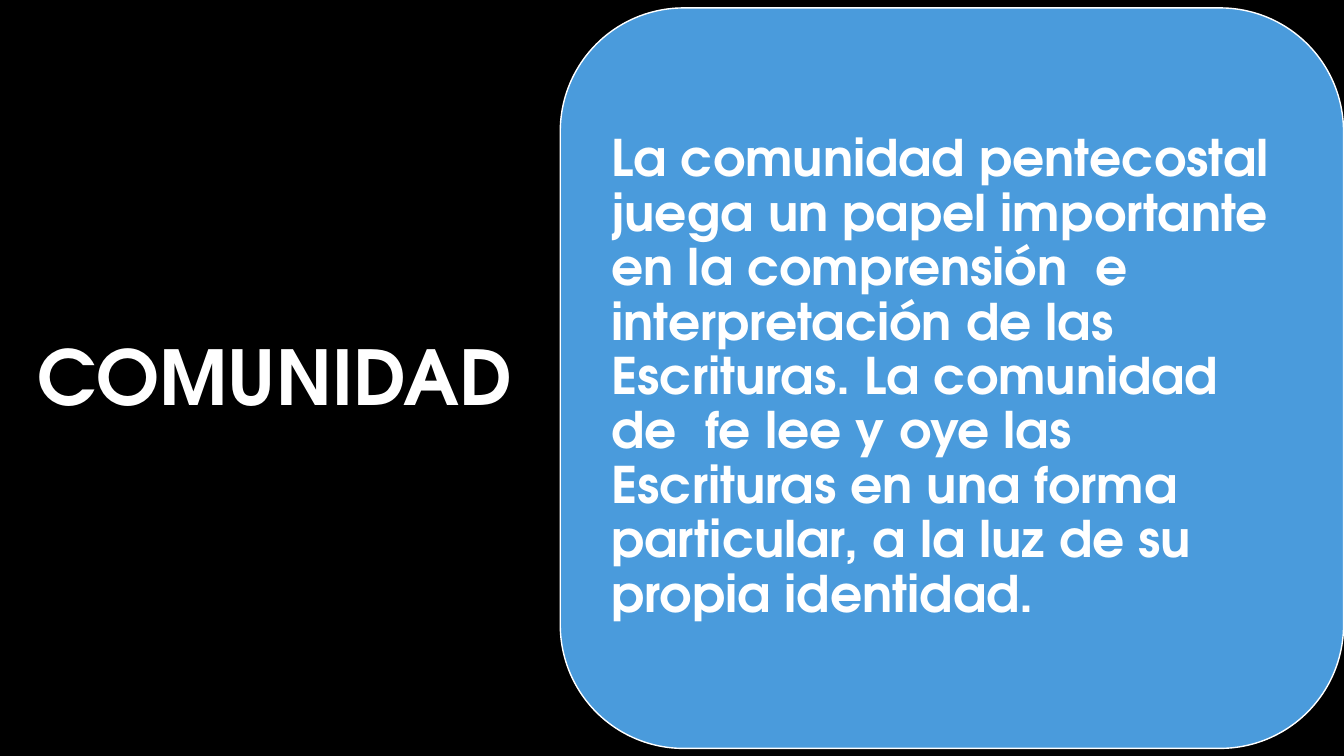
from pptx import Presentation
from pptx.dml.color import RGBColor
from pptx.enum.shapes import MSO_SHAPE
from pptx.enum.text import MSO_ANCHOR, MSO_AUTO_SIZE, PP_ALIGN
from pptx.util import Cm, Pt

ROUNDED = MSO_SHAPE.ROUNDED_RECTANGLE
MIDDLE = MSO_ANCHOR.MIDDLE
NO_AUTOFIT = MSO_AUTO_SIZE.NONE
LEFT, CENTER = PP_ALIGN.LEFT, PP_ALIGN.CENTER

FONT = "TeX Gyre Adventor"
COLORS = {"background": "000000", "panel": "4A9BDC", "text": "FFFFFF"}
TITLE_ONLY = 5

HEADING = "COMUNIDAD"
STATEMENT = (
    "La comunidad pentecostal juega un papel importante en la "
    "comprensión  e interpretación de las Escrituras. La comunidad "
    "de  fe lee y oye las Escrituras en una forma particular, "
    "a la luz de su propia identidad."
)


def color(name):
    return RGBColor.from_string(COLORS[name])


def write(shape, text, size, alignment):
    """Fill a shape with one bold, vertically centred paragraph."""
    frame = shape.text_frame
    frame.text = text
    frame.word_wrap = True
    frame.auto_size = NO_AUTOFIT
    frame.vertical_anchor = MIDDLE
    paragraph = frame.paragraphs[0]
    paragraph.alignment = alignment
    paragraph.line_spacing = 0.9
    font = paragraph.runs[0].font
    font.name = FONT
    font.size = Pt(size)
    font.bold = True
    font.color.rgb = color("text")


def add_heading(slide, text):
    heading = slide.shapes.title
    heading.left, heading.top = Cm(0.48), Cm(3.89)
    heading.width, heading.height = Cm(12.88), Cm(11.43)
    write(heading, text, 54, CENTER)


def add_panel(slide, text):
    panel = slide.shapes.add_shape(ROUNDED, Cm(14.12), Cm(0.2), Cm(19.74), Cm(18.66))
    panel.shadow.inherit = False
    panel.fill.solid()
    panel.fill.fore_color.rgb = color("panel")
    panel.line.color.rgb = color("text")
    panel.line.width = Pt(1)
    write(panel, text, 36, LEFT)
    frame = panel.text_frame
    frame.margin_left = frame.margin_right = Cm(0.38)
    frame.margin_top = frame.margin_bottom = Cm(0.38)


def main():
    presentation = Presentation()
    presentation.slide_width, presentation.slide_height = Cm(33.87), Cm(19.05)
    slide = presentation.slides.add_slide(presentation.slide_layouts[TITLE_ONLY])

    # Black backdrop
    slide.background.fill.solid()
    slide.background.fill.fore_color.rgb = color("background")

    # Heading on the left, statement on the right
    add_heading(slide, HEADING)
    add_panel(slide, STATEMENT)

    presentation.save("out.pptx")


if __name__ == "__main__":
    main()
